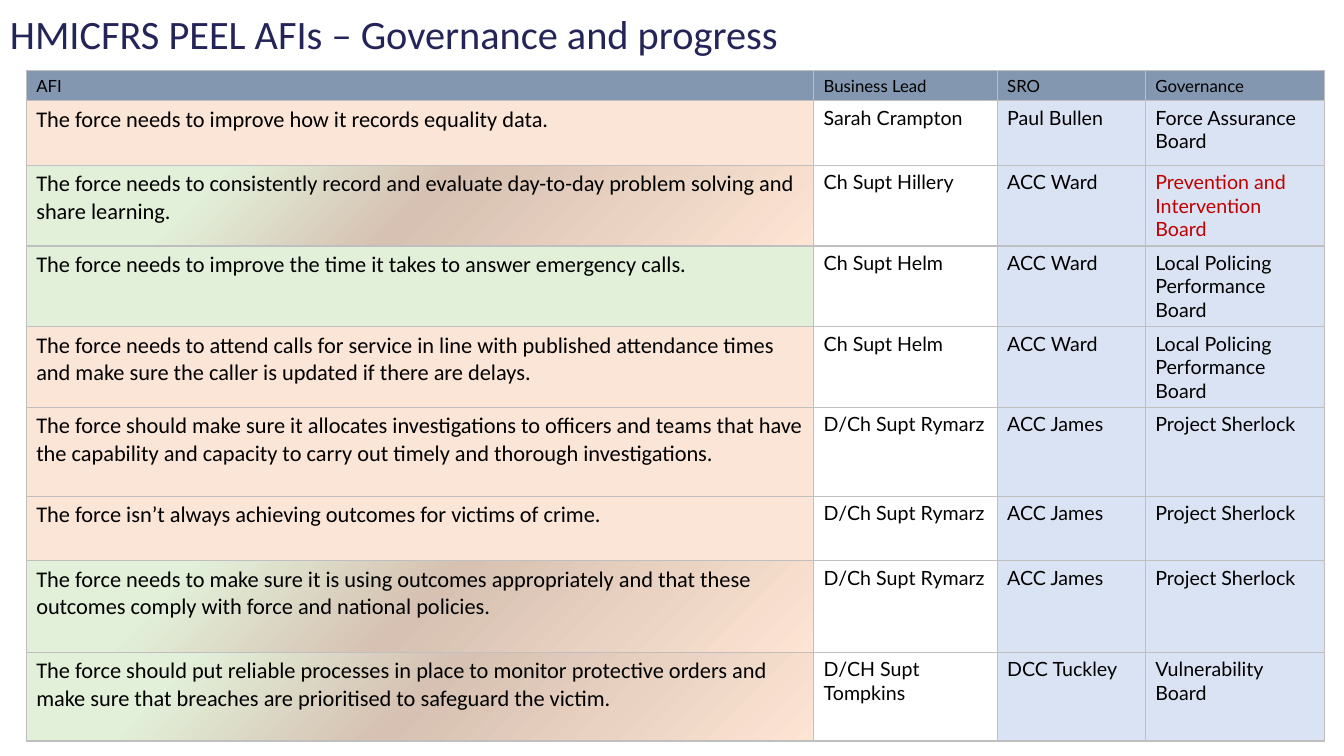
import pptx
import pptx.util
import pptx.oxml
from pptx.dml.color import RGBColor
from pptx.enum.text import MSO_ANCHOR
from pptx.util import Inches

# Colours
NAVY = RGBColor(0x24, 0x24, 0x58)
BLACK = RGBColor(0x00, 0x00, 0x00)
RED = RGBColor(0xC0, 0x00, 0x00)
SLATE = RGBColor(0x84, 0x97, 0xB0)
PEACH = RGBColor(0xFB, 0xE5, 0xD6)
GREEN = RGBColor(0xE2, 0xF0, 0xD9)
PALE_BLUE = RGBColor(0xDA, 0xE3, 0xF3)
BORDER_GREY = RGBColor(0xBF, 0xBF, 0xBF)
BLEND_MIDDLE = RGBColor(0xD6, 0xC1, 0xB2)
BLEND_END = RGBColor(0xFE, 0xE4, 0xD3)

# Content: a status is a colour, or the percentage where green starts to blend
TITLE = "HMICFRS PEEL AFIs – Governance and progress"
HEADER = ("AFI", "Business Lead", "SRO", "Governance")
AFIS = [
    (PEACH, "The force needs to improve how it records equality data.",
     "Sarah Crampton", "Paul Bullen", "Force Assurance Board"),
    (23, "The force needs to consistently record and evaluate day-to-day problem "
     "solving and share learning.",
     "Ch Supt Hillery", "ACC Ward", "Prevention and Intervention Board"),
    (GREEN, "The force needs to improve the time it takes to answer emergency calls.",
     "Ch Supt Helm", "ACC Ward", "Local Policing Performance Board"),
    (PEACH, "The force needs to attend calls for service in line with published "
     "attendance times and make sure the caller is updated if there are delays.",
     "Ch Supt Helm", "ACC Ward", "Local Policing Performance Board"),
    (PEACH, "The force should make sure it allocates investigations to officers and "
     "teams that have the capability and capacity to carry out timely and thorough "
     "investigations.",
     "D/Ch Supt Rymarz", "ACC James", "Project Sherlock"),
    (PEACH, "The force isn’t always achieving outcomes for victims of crime.",
     "D/Ch Supt Rymarz", "ACC James", "Project Sherlock"),
    (19, "The force needs to make sure it is using outcomes appropriately and that "
     "these outcomes comply with force and national policies.",
     "D/Ch Supt Rymarz", "ACC James", "Project Sherlock"),
    (19, "The force should put reliable processes in place to monitor protective "
     "orders and make sure that breaches are prioritised to safeguard the victim.",
     "D/CH Supt Tompkins", "DCC Tuckley", "Vulnerability Board"),
]
RED_BOARD = "Prevention and Intervention Board"
COLUMN_WIDTHS = (7.81, 1.82, 1.47, 1.78)
ROW_HEIGHTS = (0.3, 0.64, 0.8, 0.8, 0.8, 0.88, 0.64, 0.91, 0.88)
COLUMN_FILLS = (None, PALE_BLUE, PALE_BLUE)
NAMESPACE = 'xmlns:a="http://schemas.openxmlformats.org/drawingml/2006/main"'


def style_text(para, font_name, size, colour):
    para.font.name = font_name
    para.font.size = pptx.util.Pt(size)
    para.font.color.rgb = colour
    para.font.bold = False


def add_borders(cell):
    properties = cell._tc.get_or_add_tcPr()
    for side in "LRTB":
        properties.append(pptx.oxml.parse_xml(
            f'<a:ln{side} {NAMESPACE} w="12700"><a:solidFill>'
            f'<a:srgbClr val="{BORDER_GREY}"/></a:solidFill></a:ln{side}>'))


def blend_cell(cell, start):
    stops = "".join(
        f'<a:gs pos="{position * 1000}"><a:srgbClr val="{colour}"/></a:gs>'
        for position, colour in ((start, GREEN), (50, BLEND_MIDDLE), (100, BLEND_END)))
    cell._tc.get_or_add_tcPr().append(pptx.oxml.parse_xml(
        f'<a:gradFill {NAMESPACE} rotWithShape="1"><a:gsLst>{stops}</a:gsLst>'
        f'<a:lin ang="{45 * 60000}" scaled="0"/></a:gradFill>'))


def fill_cell(cell, text, fill, font_name, size, colour=BLACK):
    cell.text = text
    style_text(cell.text_frame.paragraphs[0], font_name, size, colour)
    add_borders(cell)
    if fill is None:
        cell.fill.background()
    elif isinstance(fill, RGBColor):
        cell.fill.solid()
        cell.fill.fore_color.rgb = fill
    else:
        blend_cell(cell, fill)


deck = pptx.Presentation()
deck.slide_width, deck.slide_height = Inches(13.33), Inches(7.5)
page = deck.slides.add_slide(deck.slide_layouts[6])

# Title
title_box = page.shapes.add_textbox(Inches(0), Inches(0.1), Inches(11.73), Inches(0.6))
title_box.text_frame.word_wrap = True
title_box.text_frame.vertical_anchor = MSO_ANCHOR.TOP
title_para = title_box.text_frame.paragraphs[0]
title_para.text = TITLE
title_para.line_spacing = 0.9
style_text(title_para, "Calibri", 28.8, NAVY)

# Table frame
table = page.shapes.add_table(
    len(ROW_HEIGHTS), len(COLUMN_WIDTHS), Inches(0.26), Inches(0.7),
    Inches(sum(COLUMN_WIDTHS)), Inches(sum(ROW_HEIGHTS))).table
table.first_row = table.horz_banding = False
for column, width in zip(table.columns, COLUMN_WIDTHS):
    column.width = Inches(width)
for row, height in zip(table.rows, ROW_HEIGHTS):
    row.height = Inches(height)

# Header and AFI rows
for column_index, heading in enumerate(HEADER):
    fill_cell(table.cell(0, column_index), heading, SLATE, "Lato", 12)
for row_index, (status, afi, *owners) in enumerate(AFIS, start=1):
    fill_cell(table.cell(row_index, 0), afi, status, "Calibri", 16)
    for column_index, (owner, fill) in enumerate(zip(owners, COLUMN_FILLS), start=1):
        colour = RED if owner == RED_BOARD else BLACK
        fill_cell(table.cell(row_index, column_index), owner, fill, "Lato", 14, colour)

deck.save("out.pptx")
